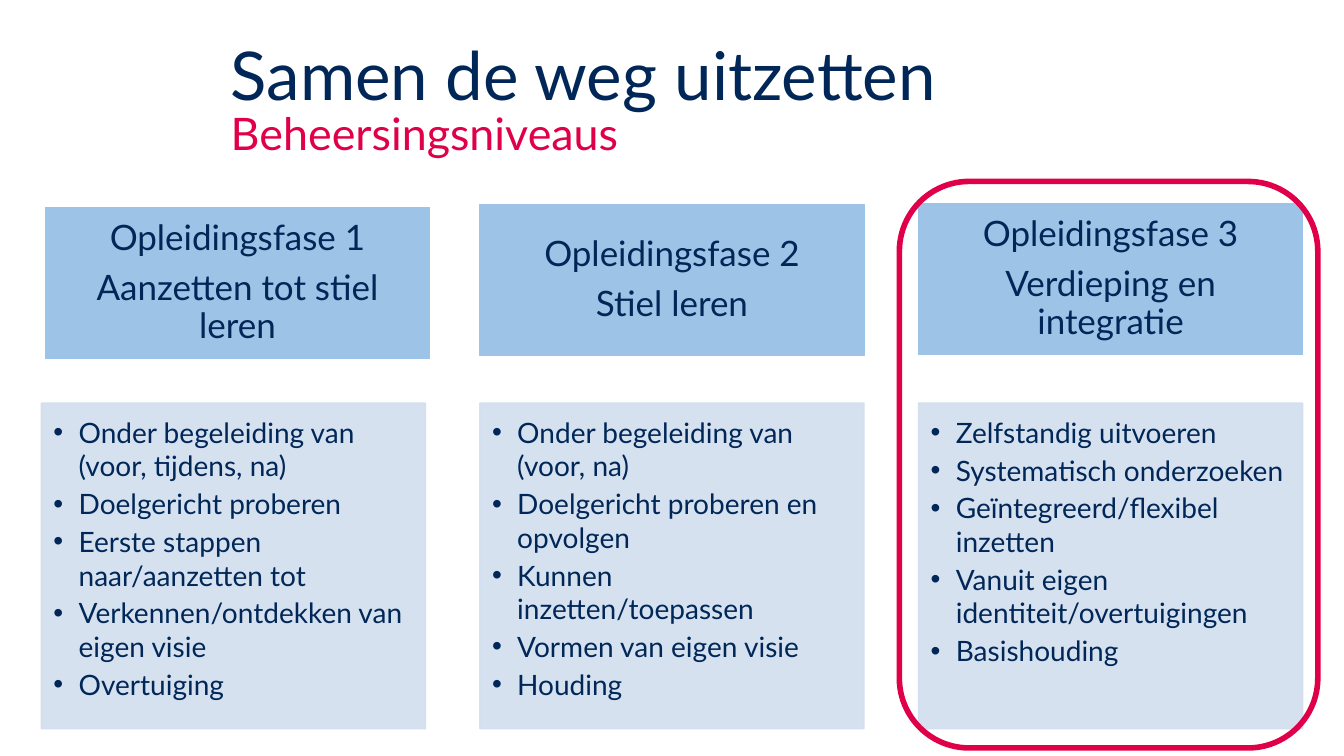
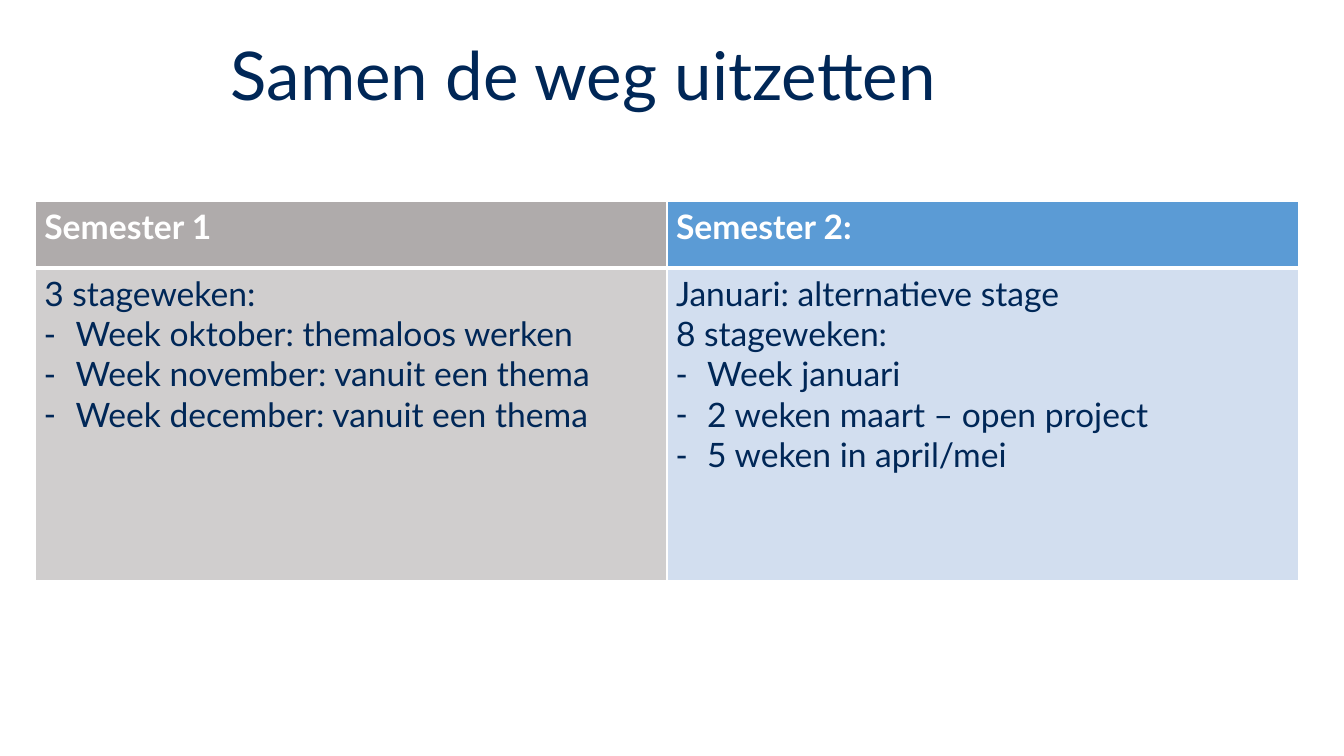
from pptx import Presentation
from pptx.dml.color import RGBColor
from pptx.enum.shapes import MSO_SHAPE as Shape
from pptx.enum.text import MSO_ANCHOR as Anchor, MSO_AUTO_SIZE as AutoSize, PP_ALIGN as Align
from pptx.oxml import parse_xml
from pptx.oxml.ns import nsdecls
from pptx.util import Inches, Pt

FONT = "Lato"
NAVY = RGBColor(0x00, 0x27, 0x57)
CRIMSON = RGBColor(0xE0, 0x00, 0x49)
WHITE = RGBColor(0xFF, 0xFF, 0xFF)
BLUE = RGBColor(0x9D, 0xC3, 0xE6)
PALE_BLUE = RGBColor(0xD2, 0xDE, 0xEF)
MID_BLUE = RGBColor(0x5B, 0x9B, 0xD5)
GREY = RGBColor(0xAF, 0xAB, 0xAB)
PALE_GREY = RGBColor(0xD0, 0xCE, 0xCE)

TITLE = "Samen de weg uitzetten"
SUBTITLE = "Beheersingsniveaus"
TITLE_LEFT = 2.19

PHASES = [
    (["Opleidingsfase 1", "Aanzetten tot stiel leren"], (0.04, 0.04),
     ["Onder begeleiding van (voor, tijdens, na)", "Doelgericht proberen",
      "Eerste stappen naar/aanzetten tot", "Verkennen/ontdekken van eigen visie",
      "Overtuiging"]),
    (["Opleidingsfase 2", "Stiel leren"], (0, 0.01),
     ["Onder begeleiding van (voor, na)", "Doelgericht proberen en opvolgen",
      "Kunnen inzetten/toepassen", "Vormen van eigen visie", "Houding"]),
    (["Opleidingsfase 3", "Verdieping en integratie"], (0, 0),
     ["Zelfstandig uitvoeren", "Systematisch onderzoeken",
      "Geïntegreerd/flexibel inzetten", "Vanuit eigen identiteit/overtuigingen",
      "Basishouding"]),
]
COLUMN_LEFT, COLUMN_STEP, COLUMN_WIDTH = 0.41, 4.35, 3.81
HEADER_TOP, HEADER_HEIGHT = 2.02, 1.5
BODY_TOP, BODY_HEIGHT = 4, 3.23

SEMESTERS = [
    ("Semester 1", GREY, PALE_GREY, ["3 stageweken:"],
     ["Week oktober: themaloos werken", "Week november: vanuit een thema",
      "Week december: vanuit een thema"]),
    ("Semester 2:", MID_BLUE, PALE_BLUE, ["Januari: alternatieve stage", "8 stageweken:"],
     ["Week januari", "2 weken maart – open project", "5 weken in april/mei"]),
]
TABLE_BOX = (0.35, 2, 12.53, 3.76)
ROW_HEIGHTS = (0.66, 3.1)


def write(frame, lines, size, color=NAVY, bold=False, align=Align.LEFT, spacing=1.0,
          after=0, bullet=None, indent=0, append=False):
    for index, line in enumerate(lines):
        is_first = index == 0 and not append
        paragraph = frame.paragraphs[0] if is_first else frame.add_paragraph()
        paragraph.alignment = align
        paragraph.line_spacing = spacing
        paragraph.space_before = Pt(0)
        paragraph.space_after = Pt(after)
        if bullet:
            properties = paragraph._p.get_or_add_pPr()
            properties.set("marL", str(Inches(indent)))
            properties.set("indent", str(-Inches(indent)))
            properties.append(parse_xml(f'<a:buFont {nsdecls("a")} typeface="Arial"/>'))
            properties.append(parse_xml(f'<a:buChar {nsdecls("a")} char="{bullet}"/>'))
        run = paragraph.add_run()
        run.text = line
        font = run.font
        font.name, font.size, font.bold = FONT, Pt(size), bold
        font.color.rgb = color


def add_titled_slide(presentation):
    slide = presentation.slides.add_slide(presentation.slide_layouts[5])
    title = slide.shapes.title
    title.left, title.top, title.width, title.height = map(
        Inches, (TITLE_LEFT, 0.08, 10.88, 1.4))
    frame = title.text_frame
    frame.auto_size = AutoSize.NONE
    frame.vertical_anchor = Anchor.MIDDLE
    write(frame, [TITLE], 48, spacing=0.9)
    return slide


def add_panel(slide, box, color, insets, anchor, opacity=100):
    shape = slide.shapes.add_shape(Shape.RECTANGLE, *map(Inches, box))
    shape.shadow.inherit = False
    shape.fill.solid()
    shape.fill.fore_color.rgb = color
    shape.line.color.rgb = color
    shape.line.width = Pt(1)
    if opacity < 100:
        for element in shape._element.spPr.xpath(".//a:srgbClr"):
            element.append(parse_xml(f'<a:alpha {nsdecls("a")} val="{opacity * 1000}"/>'))
    frame = shape.text_frame
    frame.word_wrap = True
    frame.vertical_anchor = anchor
    frame.margin_left, frame.margin_top, frame.margin_right, frame.margin_bottom = map(
        Inches, insets)
    return frame


def set_borders(cell, **widths):
    properties = cell._tc.get_or_add_tcPr()
    for side in "LRTB":
        width = Pt(widths.get(side, 1))
        properties.append(parse_xml(
            f'<a:ln{side} {nsdecls("a")} w="{width}"><a:solidFill>'
            f'<a:srgbClr val="{WHITE}"/></a:solidFill></a:ln{side}>'))


def paint_cell(cell, color, **widths):
    set_borders(cell, **widths)
    cell.fill.solid()
    cell.fill.fore_color.rgb = color
    cell.margin_left = cell.margin_right = Inches(0.09)
    cell.margin_top = cell.margin_bottom = Inches(0.05)


def build_levels_slide(presentation):
    slide = add_titled_slide(presentation)
    for index, (heading, (shift_x, shift_y), points) in enumerate(PHASES):
        left = COLUMN_LEFT + index * COLUMN_STEP
        header = add_panel(
            slide, (left + shift_x, HEADER_TOP + shift_y, COLUMN_WIDTH, HEADER_HEIGHT),
            BLUE, (0.19, 0.11, 0.19, 0.11), Anchor.MIDDLE)
        write(header, heading, 25, align=Align.CENTER, spacing=0.9, after=8.75)
        body = add_panel(slide, (left, BODY_TOP, COLUMN_WIDTH, BODY_HEIGHT), PALE_BLUE,
                         (0.12, 0.12, 0.16, 0.17), Anchor.TOP, opacity=90)
        write(body, points, 20, after=3, bullet="•", indent=0.25)

    highlight = slide.shapes.add_shape(
        Shape.ROUNDED_RECTANGLE, *map(Inches, (8.92, 1.8, 4.15, 5.62)))
    highlight.shadow.inherit = False
    highlight.fill.background()
    highlight.line.color.rgb = CRIMSON
    highlight.line.width = Pt(4)

    subtitle = slide.shapes.add_textbox(*map(Inches, (TITLE_LEFT, 1, 4.09, 0.64)))
    subtitle.text_frame.word_wrap = False
    write(subtitle.text_frame, [SUBTITLE], 32, color=CRIMSON)


def build_semesters_slide(presentation):
    slide = add_titled_slide(presentation)
    table = slide.shapes.add_table(
        len(ROW_HEIGHTS), len(SEMESTERS), *map(Inches, TABLE_BOX)).table
    for row, height in zip(table.rows, ROW_HEIGHTS):
        row.height = Inches(height)
    for column, (heading, dark, light, intro, weeks) in enumerate(SEMESTERS):
        header, body = table.cell(0, column), table.cell(1, column)
        paint_cell(header, dark, B=3)
        paint_cell(body, light, T=3)
        write(header.text_frame, [heading], 24, color=WHITE, bold=True)
        write(body.text_frame, intro, 24)
        write(body.text_frame, weeks, 24, bullet="-", indent=0.31, append=True)


def main():
    presentation = Presentation()
    presentation.slide_width, presentation.slide_height = Inches(13.33), Inches(7.5)
    build_levels_slide(presentation)
    build_semesters_slide(presentation)
    presentation.save("out.pptx")


if __name__ == "__main__":
    main()
